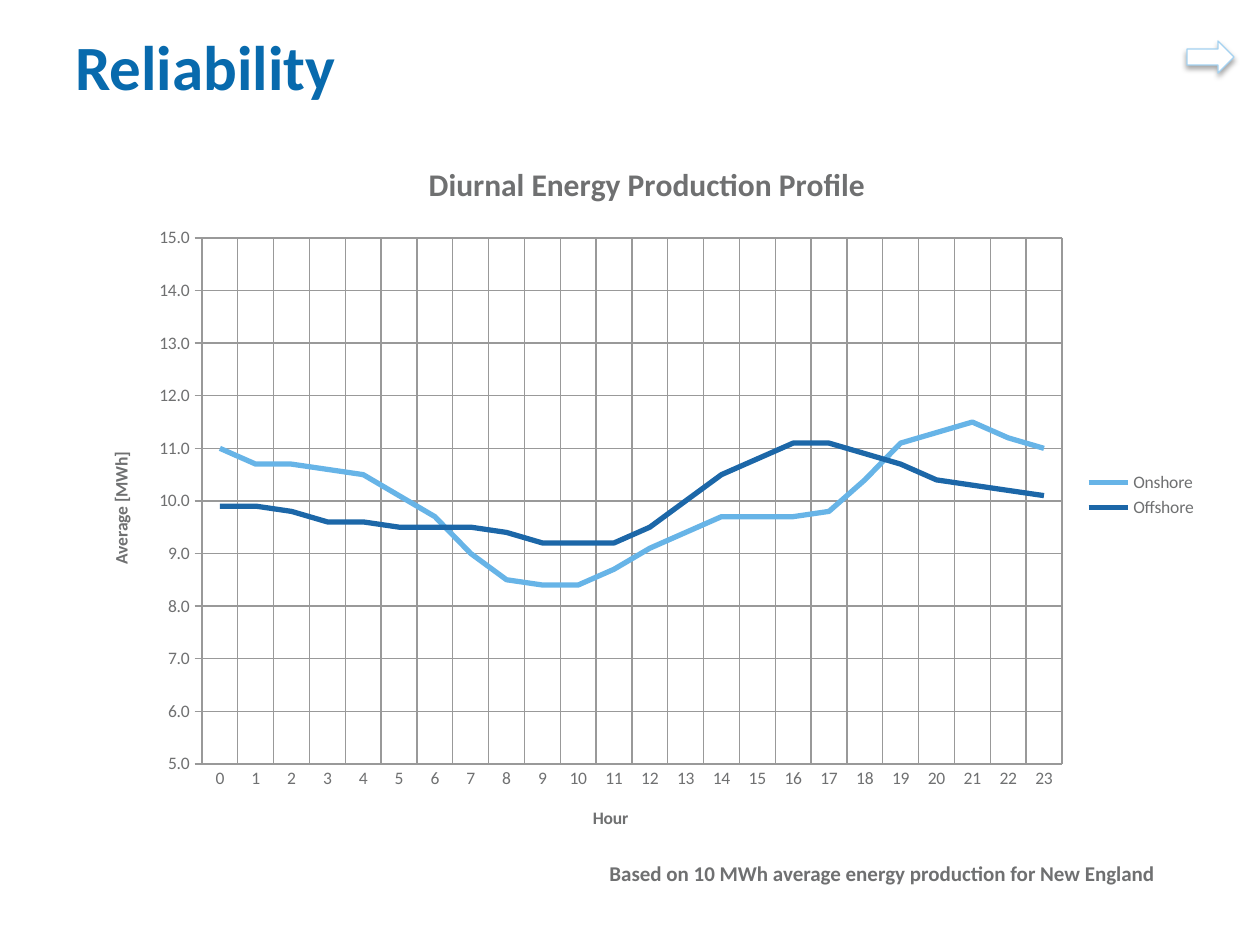
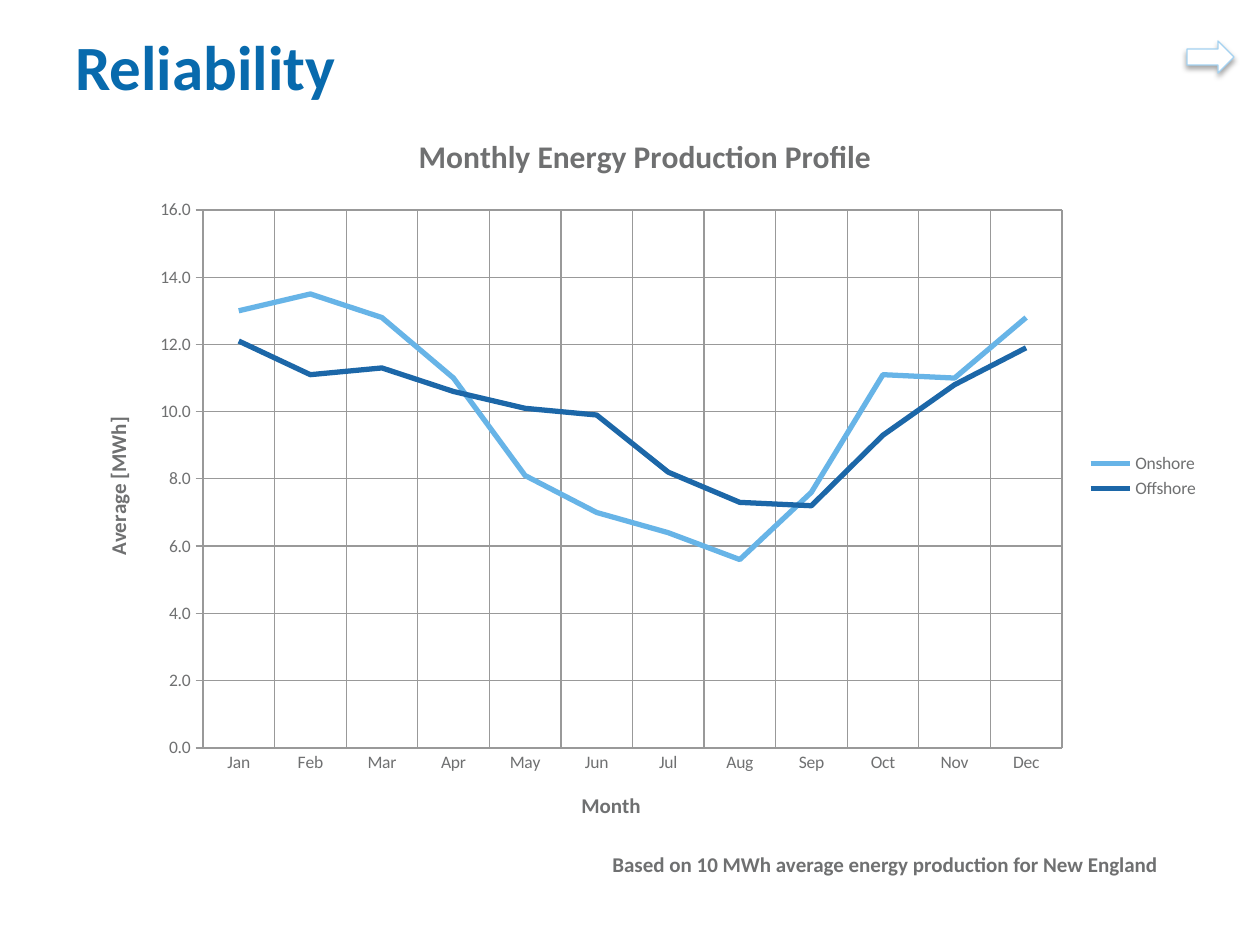
from dataclasses import dataclass

from lxml import etree
from pptx import Presentation
from pptx.chart.data import CategoryChartData
from pptx.dml.color import RGBColor
from pptx.enum import chart as charts, shapes, text
from pptx.oxml import ns
from pptx.util import Pt


@dataclass(frozen=True)
class Theme:
    font: str = "Calibri"
    title: str = "086AAD"
    body: str = "6F7071"
    grid: str = "999999"
    arrow_fill: str = "FFFFFF"
    arrow_line: str = "A4D2F1"
    series: tuple = ("67B4E7", "1C67A8")
    title_size: int = 36
    chart_title_size: int = 18
    note_size: int = 12
    label_size: int = 10
    series_width: int = 3
    thin_width: float = 0.75


THEME = Theme()
EMU_PER_PX = 914400 / 126
SLIDE_SIZE = (1260, 945)
TITLE_BOX = (63, 9, 1134, 112)
ARROW_BOX = (1187, 41, 47, 32)
NOTE_SIZE = (585, 38)

TITLE = "Reliability"
NOTE = "Based on 10 MWh average energy production for New England"
VALUE_TITLE = "Average [MWh]"

PROFILES = [
    {
        "title": "Diurnal Energy Production Profile",
        "category_title": "Hour",
        "axis_title_size": 10,
        "scale": (5, 15, 1),
        "chart_box": (84, 136, 1126, 718),
        "plot_box": (202, 238, 860, 526),
        "note_at": (597, 854),
        "categories": [str(hour) for hour in range(24)],
        "series": {
            "Onshore": [11, 10.7, 10.7, 10.6, 10.5, 10.1, 9.7, 9, 8.5, 8.4, 8.4, 8.7,
                        9.1, 9.4, 9.7, 9.7, 9.7, 9.8, 10.4, 11.1, 11.3, 11.5, 11.2, 11],
            "Offshore": [9.9, 9.9, 9.8, 9.6, 9.6, 9.5, 9.5, 9.5, 9.4, 9.2, 9.2, 9.2,
                         9.5, 10, 10.5, 10.8, 11.1, 11.1, 10.9, 10.7, 10.4, 10.3, 10.2, 10.1],
        },
    },
    {
        "title": "Monthly Energy Production Profile",
        "category_title": "Month",
        "axis_title_size": 12,
        "scale": (0, 16, 2),
        "chart_box": (78, 107, 1134, 738),
        "plot_box": (203, 210, 859, 538),
        "note_at": (600, 845),
        "categories": ["Jan", "Feb", "Mar", "Apr", "May", "Jun",
                       "Jul", "Aug", "Sep", "Oct", "Nov", "Dec"],
        "series": {
            "Onshore": [13, 13.5, 12.8, 11, 8.1, 7, 6.4, 5.6, 7.6, 11.1, 11, 12.8],
            "Offshore": [12.1, 11.1, 11.3, 10.6, 10.1, 9.9, 8.2, 7.3, 7.2, 9.3, 10.8, 11.9],
        },
    },
]


def emu(lengths):
    return [round(length * EMU_PER_PX) for length in lengths]


def style_font(font, size, color=THEME.body, bold=True):
    font.name = THEME.font
    font.size = Pt(size)
    font.bold = bold
    font.color.rgb = RGBColor.from_string(color)


def style_line(line, color, width):
    line.color.rgb = RGBColor.from_string(color)
    line.width = Pt(width)


def write(frame, content, size, color=THEME.body):
    span = frame.paragraphs[0].add_run()
    span.text = content
    style_font(span.font, size, color)


def add_text(page, place, content, size, color, wrap, anchor):
    frame = page.shapes.add_textbox(*emu(place)).text_frame
    frame.word_wrap = wrap
    frame.vertical_anchor = anchor
    write(frame, content, size, color)
    return frame


def add_arrow(page):
    arrow = page.shapes.add_shape(shapes.MSO_SHAPE.RIGHT_ARROW, *emu(ARROW_BOX))
    arrow.fill.solid()
    arrow.fill.fore_color.rgb = RGBColor.from_string(THEME.arrow_fill)
    style_line(arrow.line, THEME.arrow_line, THEME.thin_width)
    arrow.shadow.inherit = False
    effects = arrow._element.spPr.find(ns.qn("a:effectLst"))
    shadow = etree.SubElement(effects, ns.qn("a:outerShdw"), blurRad=str(Pt(3.1)),
                              dist=str(Pt(1.8)), dir="5400000", rotWithShape="0")
    color = etree.SubElement(shadow, ns.qn("a:srgbClr"), val="000000")
    etree.SubElement(color, ns.qn("a:alpha"), val="35000")


def fix_plot(chart, chart_box, plot_box):
    left, top, width, height = chart_box
    x, y, w, h = plot_box
    plot_area = chart._chartSpace.chart.plotArea
    for old in plot_area.findall(ns.qn("c:layout")):
        plot_area.remove(old)
    layout = etree.Element(ns.qn("c:layout"))
    manual = etree.SubElement(layout, ns.qn("c:manualLayout"))
    settings = {
        "layoutTarget": "inner", "xMode": "edge", "yMode": "edge",
        "x": (x - left) / width, "y": (y - top) / height,
        "w": w / width, "h": h / height,
    }
    for name, value in settings.items():
        etree.SubElement(manual, ns.qn(f"c:{name}"), val=str(value))
    plot_area.insert(0, layout)


def style_axis(axis, title, title_size, tick):
    axis.has_major_gridlines = True
    axis.major_tick_mark = tick
    axis.minor_tick_mark = charts.XL_TICK_MARK.NONE
    for line in (axis.format.line, axis.major_gridlines.format.line):
        style_line(line, THEME.grid, THEME.thin_width)
    style_font(axis.tick_labels.font, THEME.label_size, bold=False)
    write(axis.axis_title.text_frame, title, title_size)


def add_profile_chart(page, profile):
    data = CategoryChartData(number_format="0.0")
    data.categories = profile["categories"]
    for name, values in profile["series"].items():
        data.add_series(name, values)
    chart = page.shapes.add_chart(
        charts.XL_CHART_TYPE.LINE, *emu(profile["chart_box"]), data).chart
    style_font(chart.font, THEME.label_size, bold=False)
    chart.has_title = True
    write(chart.chart_title.text_frame, profile["title"], THEME.chart_title_size)
    chart.has_legend = True
    chart.legend.position = charts.XL_LEGEND_POSITION.RIGHT
    chart.legend.include_in_layout = False
    style_font(chart.legend.font, THEME.label_size, bold=False)

    size = profile["axis_title_size"]
    style_axis(chart.category_axis, profile["category_title"], size, charts.XL_TICK_MARK.NONE)
    values_axis = chart.value_axis
    style_axis(values_axis, VALUE_TITLE, size, charts.XL_TICK_MARK.OUTSIDE)
    values_axis.minimum_scale, values_axis.maximum_scale, values_axis.major_unit = profile["scale"]
    values_axis.tick_labels.number_format = "0.0"
    values_axis.tick_labels.number_format_is_linked = False

    chart.plots[0].vary_by_categories = False
    for series, color in zip(chart.plots[0].series, THEME.series):
        series.smooth = False
        style_line(series.format.line, color, THEME.series_width)
    fix_plot(chart, profile["chart_box"], profile["plot_box"])


def main():
    deck = Presentation()
    deck.slide_width, deck.slide_height = emu(SLIDE_SIZE)
    for profile in PROFILES:
        page = deck.slides.add_slide(deck.slide_layouts[6])
        add_arrow(page)
        add_profile_chart(page, profile)
        note = add_text(page, profile["note_at"] + NOTE_SIZE, NOTE, THEME.note_size,
                        THEME.body, False, text.MSO_ANCHOR.TOP)
        note.auto_size = text.MSO_AUTO_SIZE.SHAPE_TO_FIT_TEXT
        add_text(page, TITLE_BOX, TITLE, THEME.title_size,
                 THEME.title, True, text.MSO_ANCHOR.MIDDLE)
    deck.save("out.pptx")


if __name__ == "__main__":
    main()
